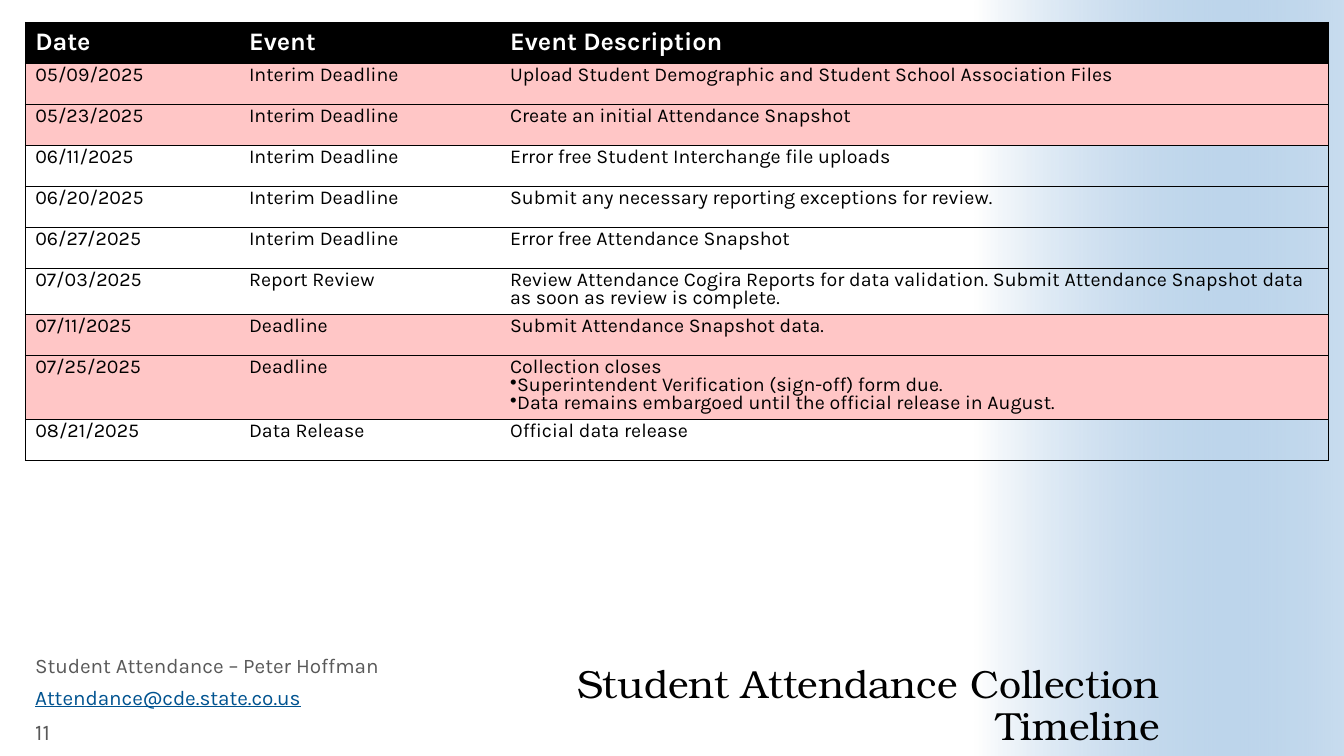
from lxml.etree import SubElement
from pptx import Presentation
from pptx.dml.color import RGBColor
from pptx.enum.shapes import MSO_SHAPE
from pptx.enum.text import MSO_ANCHOR, MSO_AUTO_SIZE, PP_ALIGN
from pptx.oxml import parse_xml
from pptx.oxml.ns import nsdecls, qn
from pptx.util import Inches, Pt

BLACK = RGBColor(0x00, 0x00, 0x00)
WHITE = RGBColor(0xFF, 0xFF, 0xFF)
PINK = RGBColor(0xFF, 0xC6, 0xC6)
BLUE = RGBColor(0x48, 0x8B, 0xC9)
LINK_BLUE = RGBColor(0x00, 0x53, 0x90)
GREY = RGBColor(0x59, 0x59, 0x59)
BODY_FONT = "Karla"
TITLE_FONT = "TeX Gyre Bonum"
PLAIN_TABLE_STYLE = "{2D5ABB26-0587-4C30-8999-92F81FD0307C}"

COLUMN_WIDTHS = (2.12, 2.59, 8.22)
ROW_HEIGHT = 0.407
HEADINGS = ("Date", "Event", "Event Description")
# Date, event, description lines (those after the first are bulleted), fill
EVENTS = (
    ("05/09/2025", "Interim Deadline",
     ["Upload Student Demographic and Student School Association Files"], PINK),
    ("05/23/2025", "Interim Deadline", ["Create an initial Attendance Snapshot"], PINK),
    ("06/11/2025", "Interim Deadline", ["Error free Student Interchange file uploads"], None),
    ("06/20/2025", "Interim Deadline",
     ["Submit any necessary reporting exceptions for review."], None),
    ("06/27/2025", "Interim Deadline", ["Error free Attendance Snapshot"], None),
    ("07/03/2025", "Report Review",
     ["Review Attendance Cogira Reports for data validation. "
      "Submit Attendance Snapshot data as soon as review is complete."], None),
    ("07/11/2025", "Deadline", ["Submit Attendance Snapshot data."], PINK),
    ("07/25/2025", "Deadline",
     ["Collection closes",
      "Superintendent Verification (sign-off) form due.",
      "Data remains embargoed until the official release in August."], PINK),
    ("08/21/2025", "Data Release", ["Official data release"], None),
)


def format_font(font, size, color, name=BODY_FONT):
    font.name = name
    font.size = Pt(size)
    font.color.rgb = color


def add_side_gradient(slide):
    """Fade from white to translucent blue, behind everything else."""
    panel = slide.shapes.add_shape(
        MSO_SHAPE.RECTANGLE, Inches(7.75), Inches(1.92), Inches(7.5), Inches(3.66))
    panel.rotation = 270
    panel.shadow.inherit = False
    panel.line.fill.background()
    gradient = parse_xml(
        f'<a:gradFill {nsdecls("a")} rotWithShape="1"><a:gsLst>'
        f'<a:gs pos="0"><a:srgbClr val="{WHITE}"/></a:gs>'
        f'<a:gs pos="100000"><a:srgbClr val="{BLUE}"><a:alpha val="30000"/></a:srgbClr></a:gs>'
        '</a:gsLst><a:lin ang="5400000" scaled="0"/></a:gradFill>')
    panel._element.spPr.find(qn("a:prstGeom")).addnext(gradient)
    slide.shapes._spTree.insert(2, panel._element)


def set_title(slide, text):
    title = slide.shapes.title
    title.left, title.top = Inches(4.26), Inches(6.45)
    title.width, title.height = Inches(7.24), Inches(0.98)
    frame = title.text_frame
    frame.text = text
    frame.auto_size = MSO_AUTO_SIZE.NONE
    frame.vertical_anchor = MSO_ANCHOR.BOTTOM
    frame.margin_left = frame.margin_right = frame.margin_top = frame.margin_bottom = 0
    para = frame.paragraphs[0]
    para.alignment = PP_ALIGN.RIGHT
    para.line_spacing = 0.9
    format_font(para.runs[0].font, 28, BLACK, TITLE_FONT)


def draw_borders(cell, sides):
    properties = cell._tc.get_or_add_tcPr()
    for side in sides:
        line = SubElement(properties, qn(f"a:ln{side}"), w=str(Pt(0.5)))
        fill = SubElement(line, qn("a:solidFill"))
        SubElement(fill, qn("a:srgbClr"), val=str(BLACK))


def add_bullet(para):
    properties = para._p.get_or_add_pPr()
    properties.set("marL", "0")
    properties.set("indent", "0")
    SubElement(properties, qn("a:buChar"), char="•")


def fill_cell(cell, lines, fill, size, color, bold=False, spacing=None):
    cell.text_frame.text = "\n".join(lines)
    for index, para in enumerate(cell.text_frame.paragraphs):
        para.line_spacing = spacing
        if index:
            add_bullet(para)
        format_font(para.runs[0].font, size, color)
        para.runs[0].font.bold = bold
    if fill is None:
        cell.fill.background()
    else:
        cell.fill.solid()
        cell.fill.fore_color.rgb = fill


def add_timeline(slide):
    row_count, column_count = len(EVENTS) + 1, len(HEADINGS)
    frame = slide.shapes.add_table(
        row_count, column_count, Inches(0.25), Inches(0.22),
        Inches(sum(COLUMN_WIDTHS)), Inches(ROW_HEIGHT * row_count))
    table = frame.table
    table.horz_banding = False
    table._tbl.tblPr.find(qn("a:tableStyleId")).text = PLAIN_TABLE_STYLE
    for column, width in zip(table.columns, COLUMN_WIDTHS):
        column.width = Inches(width)
    for row in table.rows:
        row.height = Inches(ROW_HEIGHT)
        for index, cell in enumerate(row.cells):
            left = ["L"] if index == 0 else []
            right = ["R"] if index == column_count - 1 else []
            draw_borders(cell, left + right + ["T", "B"])
    for column, heading in enumerate(HEADINGS):
        fill_cell(table.cell(0, column), [heading], BLACK, 18, WHITE, bold=True)
    for row, (date, event, description, fill) in enumerate(EVENTS, start=1):
        for column, lines in enumerate(([date], [event], description)):
            fill_cell(table.cell(row, column), lines, fill, 14, BLACK, spacing=Pt(12.8))


def add_footer_line(slide, text, top, width, size, color=GREY, spacing=0.8):
    box = slide.shapes.add_textbox(Inches(0.25), Inches(top), Inches(width), Inches(0.31))
    frame = box.text_frame
    frame.word_wrap = True
    frame.text = text
    para = frame.paragraphs[0]
    para.line_spacing = spacing
    format_font(para.runs[0].font, size, color)
    return box


def main():
    deck = Presentation()
    deck.slide_width, deck.slide_height = Inches(13.33), Inches(7.5)
    slide = deck.slides.add_slide(deck.slide_layouts[5])
    add_side_gradient(slide)
    set_title(slide, "Student Attendance Collection Timeline")
    add_timeline(slide)
    add_footer_line(slide, "Student Attendance – Peter Hoffman", 6.47, 3.89, 14.8)
    email = add_footer_line(slide, "Attendance@cde.state.co.us", 6.79, 3.89, 14.8, LINK_BLUE)
    email.text_frame.paragraphs[0].runs[0].font.underline = True
    number = add_footer_line(slide, "11", 7.1, 0.85, 16, spacing=1.0)
    number.text_frame.vertical_anchor = MSO_ANCHOR.MIDDLE
    deck.save("out.pptx")


if __name__ == "__main__":
    main()
